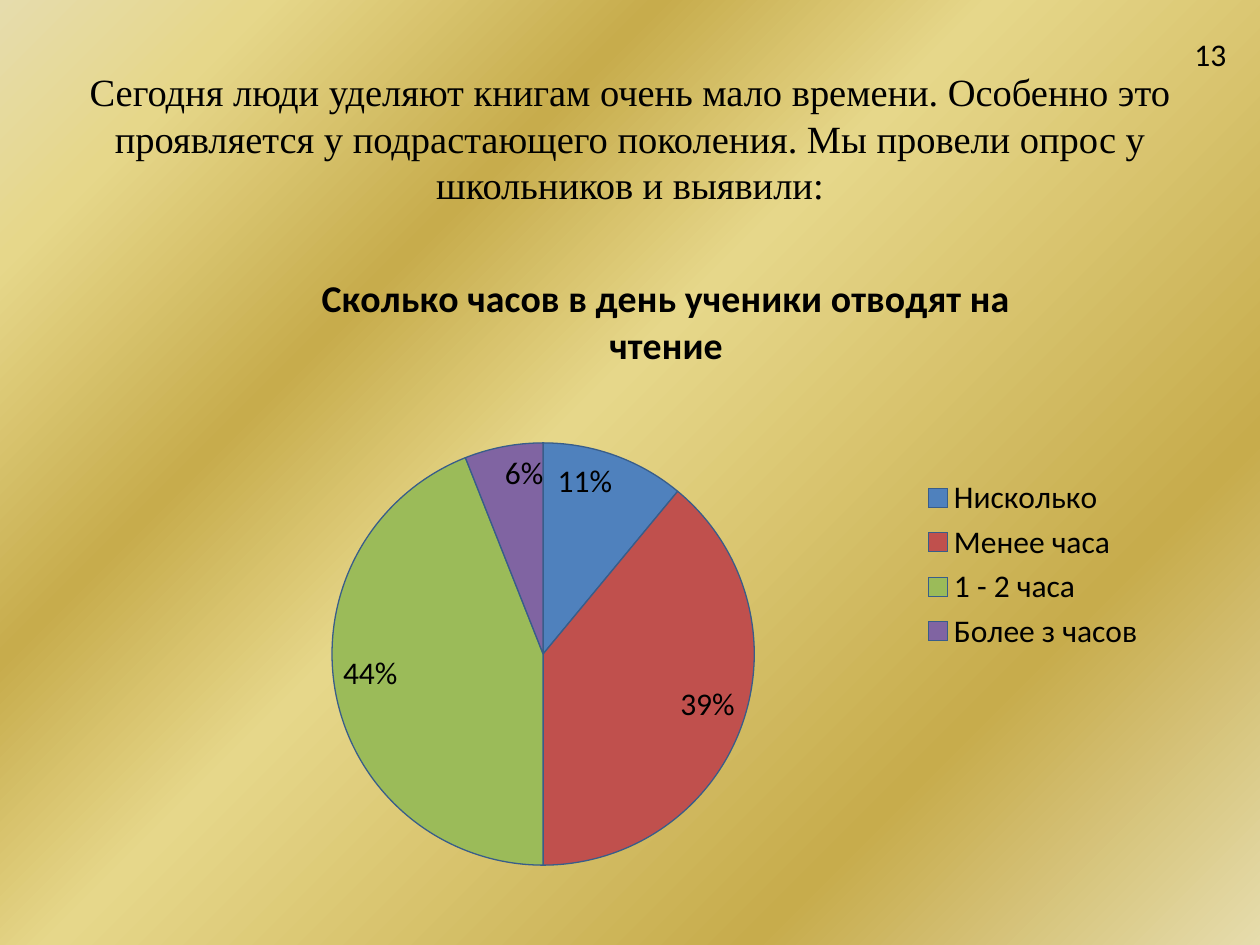
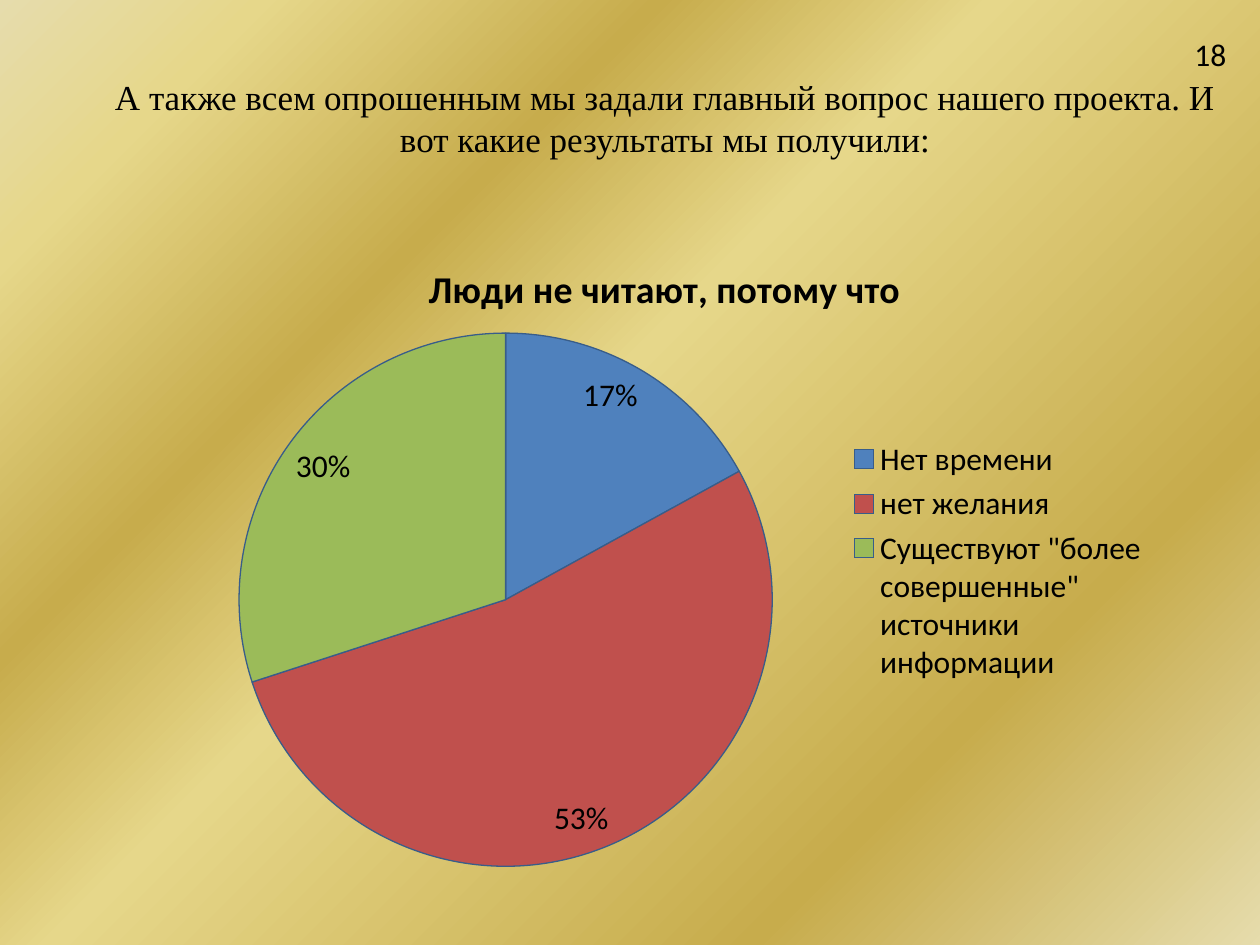
from lxml import etree
from pptx import Presentation
from pptx.chart.data import CategoryChartData
from pptx.dml.color import RGBColor
from pptx.enum.chart import XL_CHART_TYPE, XL_LABEL_POSITION, XL_LEGEND_POSITION
from pptx.enum.text import MSO_ANCHOR, PP_ALIGN
from pptx.oxml import parse_xml
from pptx.oxml.ns import nsdecls, qn
from pptx.util import Cm, Pt

PIE = XL_CHART_TYPE.PIE
INSIDE_END = XL_LABEL_POSITION.INSIDE_END
RIGHT = XL_LEGEND_POSITION.RIGHT
MIDDLE, TOP = MSO_ANCHOR.MIDDLE, MSO_ANCHOR.TOP
CENTER, LEFT = PP_ALIGN.CENTER, PP_ALIGN.LEFT

COLORS = {
    "text": "000000", "outline": "385D8A",
    "pale": "E6DCAC", "light": "E6D78A", "gold": "C7AC4C",
    "blue": "4F81BD", "red": "C0504D", "green": "9BBB59", "purple": "8064A2",
}
SLICES = ["blue", "red", "green", "purple"]
GRADIENT = [(0, "pale"), (12, "light"), (30, "gold"),
            (45, "light"), (77, "gold"), (100, "pale")]

# Boxes are left, top, width, height in cm; plots are fractions of the chart
SLIDES = [
    {
        "number": "13",
        "title": "Сегодня люди уделяют книгам очень мало времени. Особенно это "
                 "проявляется у подрастающего поколения. Мы провели опрос у "
                 "школьников и выявили:",
        "title_box": (1.27, 0.76, 22.86, 5.79), "title_size": 22, "bottom": 1.88,
        "chart_title": "Сколько часов в день ученики отводят на чтение",
        "chart_box": (3.51, 4.93, 19.84, 12.9),
        "plot": {"x": 0.16, "y": 0.31, "w": 0.43, "h": 0.66},
        "answers": {"Нисколько": 11, "Менее часа": 39,
                    "1 - 2 часа": 44, "Более з часов": 6},
    },
    {
        "number": "18",
        "title": "А также всем опрошенным мы задали главный вопрос нашего "
                 "проекта. И вот какие результаты мы получили:",
        "title_box": (1.98, 0.79, 22.86, 3.18), "title_size": 20, "bottom": 0.13,
        "chart_title": "Люди не читают, потому что",
        "chart_box": (3.38, 4.75, 20.04, 13.11),
        "plot": {"x": 0.07, "y": 0.15, "w": 0.54, "h": 0.82},
        "answers": {"Нет времени": 17, "нет желания": 53,
                    'Существуют "более совершенные" источники информации': 30},
    },
]


def set_font(font, name, size, bold=False):
    for key, value in {"name": name, "size": Pt(size), "bold": bold}.items():
        setattr(font, key, value)
    font.color.rgb = RGBColor.from_string(COLORS["text"])


def add_text(s, text, box, font, size, align, frame):
    tf = s.shapes.add_textbox(*map(Cm, box)).text_frame
    for key, value in frame.items():
        setattr(tf, key, value)
    p = tf.paragraphs[0]
    p.alignment = align
    r = p.add_run()
    r.text = text
    set_font(r.font, font, size)


prs = Presentation()
prs.slide_width, prs.slide_height = Cm(25.4), Cm(19.05)

for data in SLIDES:
    s = prs.slides.add_slide(prs.slide_layouts[6])

    # Diagonal gold background
    fill = s.background.fill
    fill.gradient()
    fill.gradient_angle = 315
    stops = s.background._cSld.find(".//" + qn("a:gsLst"))
    for stop in list(stops):
        stops.remove(stop)
    for pos, name in GRADIENT:
        stop = etree.SubElement(stops, qn("a:gs"), pos=str(pos * 1000))
        etree.SubElement(stop, qn("a:srgbClr"), val=COLORS[name])

    # Title
    add_text(s, data["title"], data["title_box"], "Times New Roman",
             data["title_size"], CENTER,
             {"word_wrap": True, "vertical_anchor": MIDDLE,
              "margin_bottom": Cm(data["bottom"])})

    # Pie chart
    chart_data = CategoryChartData()
    chart_data.categories = list(data["answers"])
    chart_data.add_series(data["chart_title"], list(data["answers"].values()))
    chart = s.shapes.add_chart(PIE, *map(Cm, data["chart_box"]), chart_data).chart
    set_font(chart.font, "Calibri", 18)
    chart._chartSpace.find(qn("c:txPr")).addprevious(parse_xml(
        f'<c:spPr {nsdecls("c", "a")}><a:noFill/><a:ln><a:noFill/></a:ln></c:spPr>'))

    # Chart title and legend
    chart.has_title = True
    tf = chart.chart_title.text_frame
    tf.text = data["chart_title"]
    set_font(tf.paragraphs[0].runs[0].font, "Calibri", 21.6, True)
    chart.chart_title.include_in_layout = False
    chart.has_legend = True
    chart.legend.position = RIGHT
    chart.legend.include_in_layout = False

    # Slices and their percentages
    plot = chart.plots[0]
    plot.vary_by_categories = True
    for i in range(len(data["answers"])):
        fmt = plot.series[0].points[i].format
        fmt.fill.solid()
        fmt.fill.fore_color.rgb = RGBColor.from_string(COLORS[SLICES[i]])
        fmt.line.color.rgb = RGBColor.from_string(COLORS["outline"])
        fmt.line.width = Pt(0.75)
    plot.has_data_labels = True
    labels = plot.data_labels
    for key, value in {"show_percentage": True, "show_value": False,
                       "number_format": "0%", "number_format_is_linked": False,
                       "position": INSIDE_END}.items():
        setattr(labels, key, value)
    set_font(labels.font, "Calibri", 18)

    # Place of the pie inside the chart
    area = chart._chartSpace.find(".//" + qn("c:plotArea"))
    for old in area.findall(qn("c:layout")):
        area.remove(old)
    layout = etree.Element(qn("c:layout"))
    manual = etree.SubElement(layout, qn("c:manualLayout"))
    settings = {"layoutTarget": "inner", "xMode": "edge", "yMode": "edge"}
    for tag, value in {**settings, **data["plot"]}.items():
        etree.SubElement(manual, qn("c:" + tag), val=str(value))
    area.insert(0, layout)

    # Slide number
    add_text(s, data["number"], (23.83, 0.58, 1.17, 1.02), "Calibri", 18, LEFT,
             {"word_wrap": False, "vertical_anchor": TOP})

prs.save("out.pptx")
